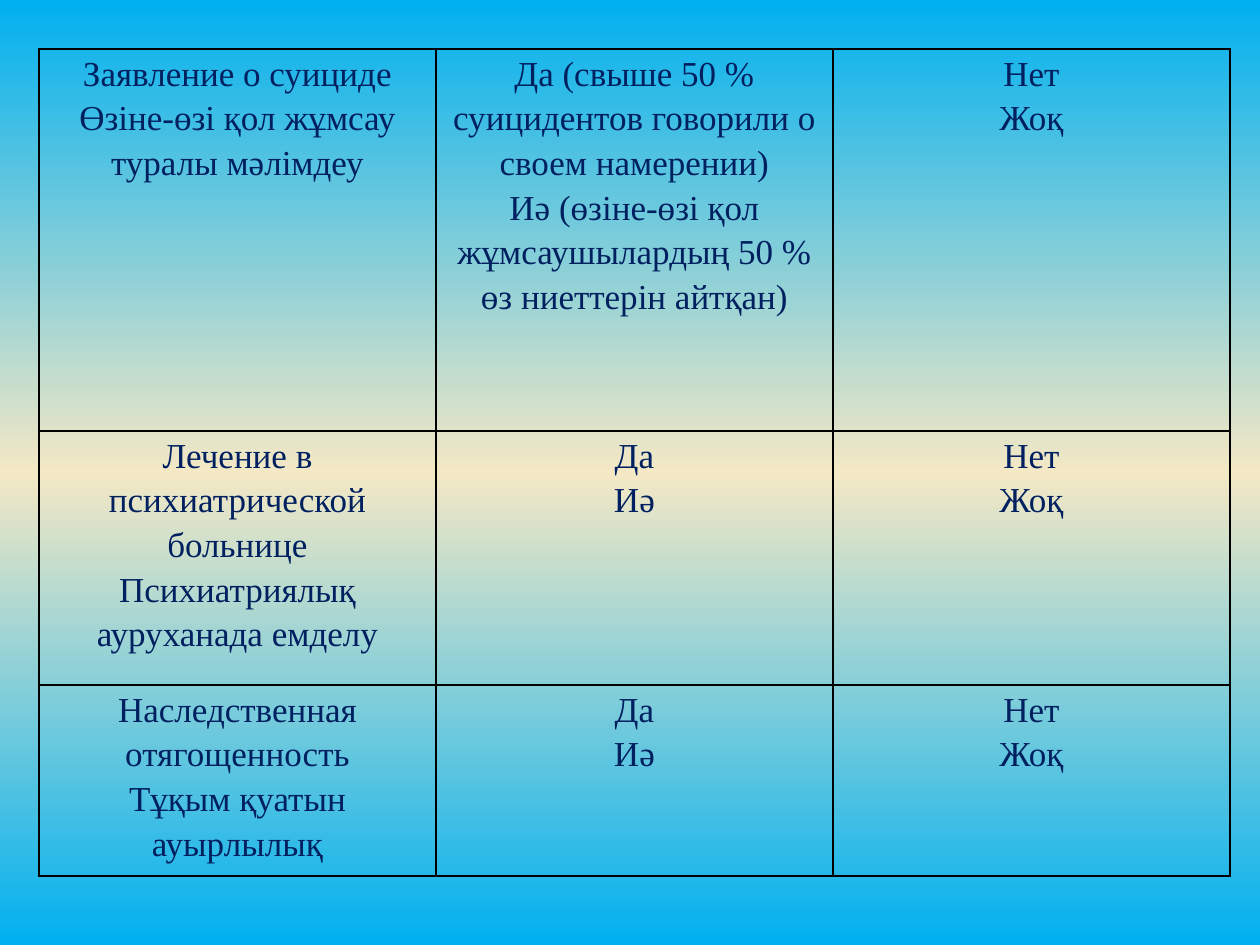
import copy

import pptx
import pptx.dml.color
import pptx.enum.text
import pptx.oxml
import pptx.oxml.ns
import pptx.util

PX = 914400 // 126  # EMU in one px

ROWS = [
    [
        ["Заявление о суициде", "Өзіне-өзі қол жұмсау туралы мәлімдеу"],
        ["Да (свыше 50 % суицидентов говорили о своем намерении)",
         "Иә (өзіне-өзі қол жұмсаушылардың 50 % өз ниеттерін айтқан)"],
        ["Нет", "Жоқ"],
    ],
    [
        ["Лечение в психиатрической больнице", "Психиатриялық ауруханада емделу"],
        ["Да", "Иә"],
        ["Нет", "Жоқ"],
    ],
    [
        ["Наследственная отягощенность", "Тұқым қуатын ауырлылық"],
        ["Да", "Иә"],
        ["Нет", "Жоқ"],
    ],
]
ROW_HEIGHTS = [382, 254, 191]
COLUMN_WIDTH = 397
TABLE_LEFT, TABLE_TOP = 39, 49
SIDE_MARGIN = 6
GRADIENT = [(0, "00B0F0"), (0.5, "F4E8C5"), (1, "00B0F0")]
TEXT_COLOR, BORDER_COLOR = "002060", "000000"


def px(length):
    return pptx.util.Emu(length * PX)


def rgb(color):
    return pptx.dml.color.RGBColor.from_string(color)


def paint_background(slide):
    fill = slide.background.fill
    fill.gradient()
    fill.gradient_angle = 270  # counter-clockwise, so top to bottom
    stop_list = slide.element.find(".//" + pptx.oxml.ns.qn("a:gsLst"))
    stop_list.append(copy.deepcopy(stop_list[0]))
    for stop, (position, color) in zip(fill.gradient_stops, GRADIENT):
        stop.position = position
        stop.color.rgb = rgb(color)


def add_borders(cell):
    properties = cell._tc.get_or_add_tcPr()
    for index, side in enumerate(("lnL", "lnR", "lnT", "lnB")):
        properties.insert(index, pptx.oxml.parse_xml(
            f'<a:{side} {pptx.oxml.ns.nsdecls("a")} w="12700"><a:solidFill>'
            f'<a:srgbClr val="{BORDER_COLOR}"/></a:solidFill></a:{side}>'))


def fill_cell(cell, lines):
    cell.fill.background()
    add_borders(cell)
    cell.margin_left = cell.margin_right = px(SIDE_MARGIN)
    cell.margin_top = cell.margin_bottom = 0
    cell.text = "\n".join(lines)
    for paragraph in cell.text_frame.paragraphs:
        paragraph.alignment = pptx.enum.text.PP_ALIGN.CENTER
        paragraph.line_spacing = 1.15
        paragraph.font.name = "Times New Roman"
        paragraph.font.size = pptx.util.Pt(20)
        paragraph.font.color.rgb = rgb(TEXT_COLOR)


def main():
    presentation = pptx.Presentation()
    presentation.slide_width, presentation.slide_height = px(1260), px(945)
    slide = presentation.slides.add_slide(presentation.slide_layouts[6])
    paint_background(slide)

    # Table of risk factors
    column_count = len(ROWS[0])
    table = slide.shapes.add_table(
        len(ROWS), column_count, px(TABLE_LEFT), px(TABLE_TOP),
        px(COLUMN_WIDTH * column_count), px(sum(ROW_HEIGHTS))).table
    table.first_row = table.horz_banding = False
    for column in table.columns:
        column.width = px(COLUMN_WIDTH)
    for row, height, contents in zip(table.rows, ROW_HEIGHTS, ROWS):
        row.height = px(height)
        for cell, lines in zip(row.cells, contents):
            fill_cell(cell, lines)

    presentation.save("out.pptx")


if __name__ == "__main__":
    main()
